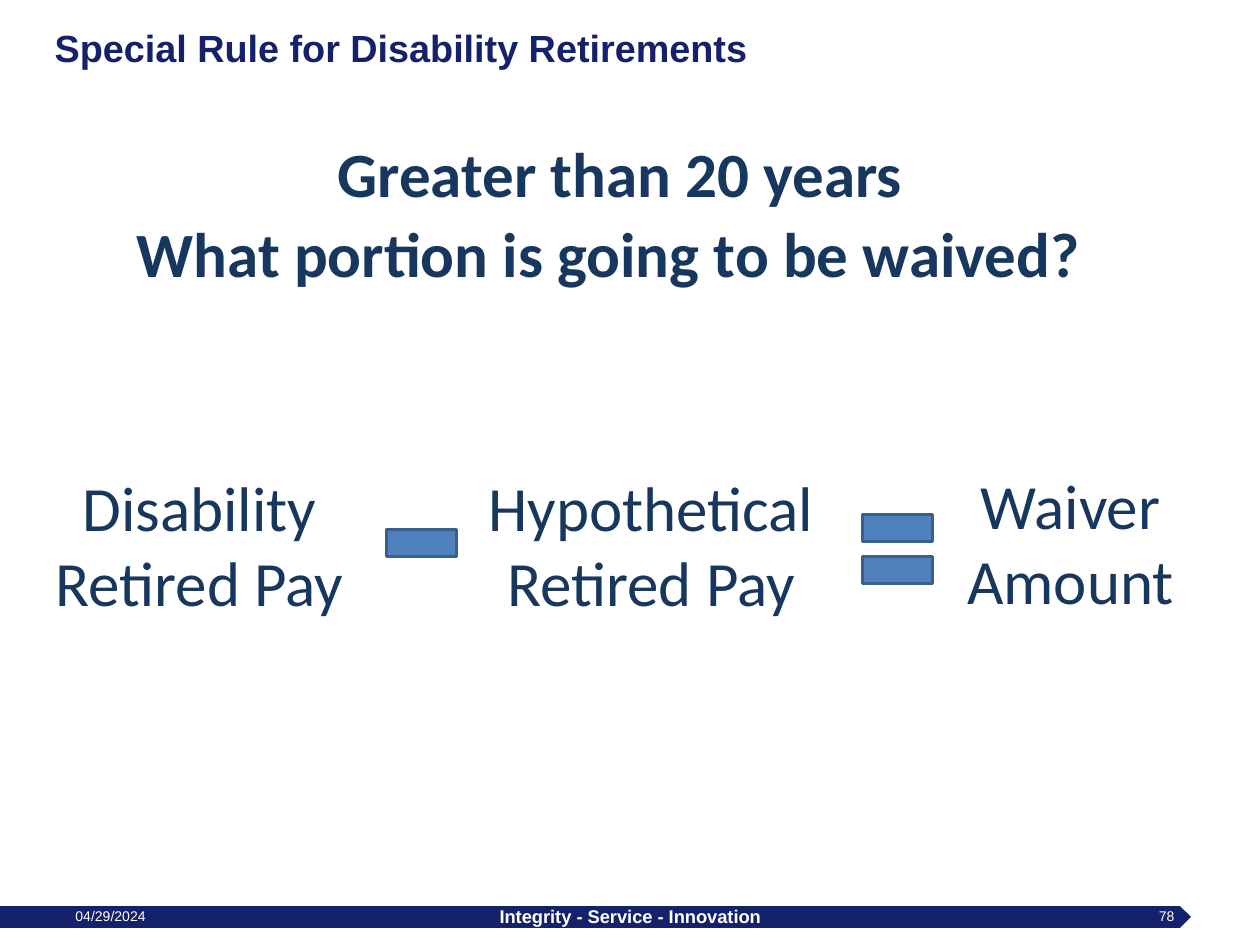
"""Build the slide on the waived portion of disability retired pay."""
from pptx import Presentation
from pptx.dml.color import RGBColor
from pptx.enum.shapes import MSO_SHAPE
from pptx.enum.text import MSO_ANCHOR, MSO_AUTO_SIZE, PP_ALIGN
from pptx.util import Emu, Pt

SCALE = 914400 / 126
NAVY, BLUE, WHITE = "16216C", "17375E", "FFFFFF"


def color(value):
    return RGBColor.from_string(value)


def write(box, place, text, size, font, fill, bold, align, anchor):
    box.left, box.top, box.width, box.height = [Emu(round(n * SCALE)) for n in place]
    frame = box.text_frame
    frame.word_wrap = True
    frame.auto_size = MSO_AUTO_SIZE.NONE
    frame.vertical_anchor = anchor
    para = frame.paragraphs[0]
    para.alignment = align
    span = para.add_run()
    span.text = text
    span.font.size = Pt(size)
    span.font.name = font
    span.font.bold = bold
    span.font.color.rgb = color(fill)


deck = Presentation()
deck.slide_width = Emu(round(1260 * SCALE))
deck.slide_height = Emu(round(945 * SCALE))
page = deck.slides.add_slide(deck.slide_layouts[5])
shapes = page.shapes

banner = shapes.add_shape(
    MSO_SHAPE.PENTAGON, *[Emu(round(n * SCALE)) for n in (0, 906, 1191, 22)])
banner.shadow.inherit = False
banner.fill.solid()
banner.fill.fore_color.rgb = color(NAVY)
banner.line.fill.background()

write(shapes.title, (42, 21, 1176, 53), "Special Rule for Disability Retirements",
      21.6, "Arial", NAVY, True, PP_ALIGN.LEFT, MSO_ANCHOR.MIDDLE)

footers = [
    ((63, 905, 294, 22), "04/29/2024", 8, False, PP_ALIGN.LEFT),
    ((431, 905, 399, 22), "Integrity - Service - Innovation", 10.5, True, PP_ALIGN.CENTER),
    ((903, 905, 284, 22), "78", 8, False, PP_ALIGN.RIGHT),
]
for place, text, size, bold, align in footers:
    write(shapes.add_textbox(0, 0, 0, 0), place, text, size, "Arial", WHITE, bold,
          align, MSO_ANCHOR.MIDDLE)

statements = [
    ((242, 128, 756, 89), "Greater than 20 years", True),
    ((73, 208, 1071, 89), "What portion is going to be waived?", True),
    ((0, 462, 399, 165), "Disability Retired Pay", False),
    ((441, 462, 420, 165), "Hypothetical Retired Pay", False),
    ((861, 460, 419, 165), "Waiver Amount", False),
]
for place, text, bold in statements:
    write(shapes.add_textbox(0, 0, 0, 0), place, text, 36, "Calibri", BLUE, bold,
          PP_ALIGN.CENTER, MSO_ANCHOR.TOP)

for left, top in [(374, 485), (850, 470), (850, 512)]:
    bar = shapes.add_shape(
        MSO_SHAPE.MATH_MINUS, *[Emu(round(n * SCALE)) for n in (left, top, 95, 116)])
    bar.shadow.inherit = False
    bar.fill.solid()
    bar.fill.fore_color.rgb = color("4F81BD")
    bar.line.color.rgb = color("3A5F8C")
    bar.line.width = Pt(2)

deck.save("out.pptx")
